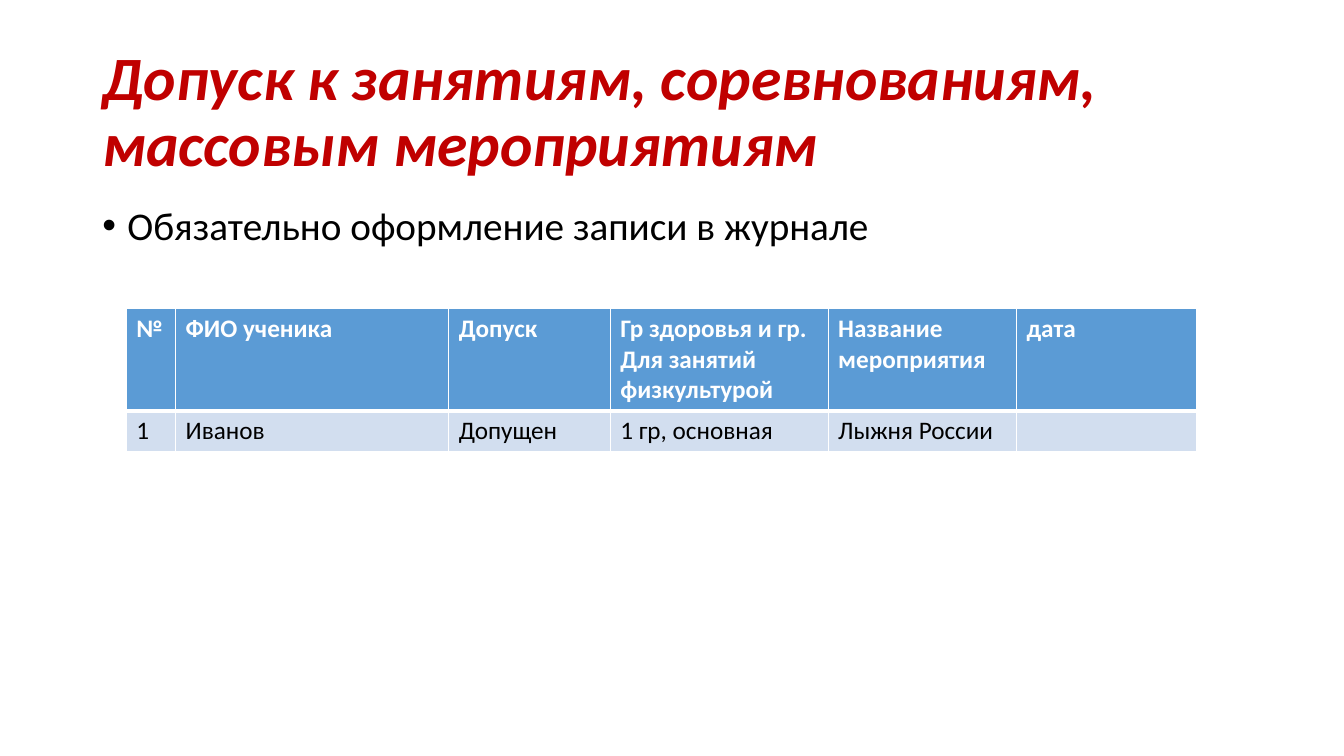
from lxml import etree
from pptx import Presentation
from pptx.dml.color import RGBColor
from pptx.enum.text import MSO_ANCHOR, MSO_AUTO_SIZE, PP_ALIGN
from pptx.oxml.ns import qn
from pptx.util import Pt

MIDDLE, TOP = MSO_ANCHOR.MIDDLE, MSO_ANCHOR.TOP
LEFT = PP_ALIGN.LEFT
NO_AUTOFIT = MSO_AUTO_SIZE.NONE
TITLE_ONLY = 5

FONT = "Calibri"
RED, BLACK, WHITE = "C00000", "000000", "FFFFFF"
HEADER_BLUE, ROW_BLUE = "5B9BD5", "D2DEEF"

TITLE_BOX = (66, 28.8, 828, 104.4)
BODY_BOX = (66, 144, 828, 342.72)
JOURNAL_BOX = (90.25, 220.3, 764.6, 101.5)

COLUMN_WIDTHS = (35.2, 195.1, 115.4, 155.6, 134.6, 128.7)
ENTRY_HEIGHT = 29.2
JOURNAL = (
    ("№", "ФИО ученика", "Допуск", "Гр здоровья и гр. Для занятий физкультурой",
     "Название мероприятия", "дата"),
    ("1", "Иванов", "Допущен", "1 гр, основная", "Лыжня России", ""),
)


def color(value):
    return RGBColor.from_string(value)


def format_font(font, text_color, **values):
    font.color.rgb = color(text_color)
    for name, value in {"name": FONT, **values}.items():
        setattr(font, name, value)


def format_frame(frame, anchor):
    values = {"word_wrap": True, "auto_size": NO_AUTOFIT, "vertical_anchor": anchor}
    for name, value in values.items():
        setattr(frame, name, value)


def add_title(slide, box, text):
    title = slide.shapes.title
    title.left, title.top, title.width, title.height = map(Pt, box)
    format_frame(title.text_frame, MIDDLE)
    paragraph = title.text_frame.paragraphs[0]
    paragraph.alignment = LEFT
    paragraph.line_spacing = 0.9
    run = paragraph.add_run()
    run.text = text
    format_font(run.font, RED, size=Pt(44), bold=True, italic=True)


def add_requirement(slide, box, text):
    frame = slide.shapes.add_textbox(*map(Pt, box)).text_frame
    format_frame(frame, TOP)
    paragraph = frame.paragraphs[0]
    paragraph.line_spacing = 0.9
    paragraph.space_before = Pt(10)
    properties = paragraph._p.get_or_add_pPr()
    properties.set("marL", str(Pt(18)))
    properties.set("indent", str(Pt(-18)))
    etree.SubElement(properties, qn("a:buFont"), typeface="Arial")
    etree.SubElement(properties, qn("a:buChar"), char="•")
    run = paragraph.add_run()
    run.text = text
    format_font(run.font, BLACK, size=Pt(28))


def set_borders(cell, widths):
    """Draw white borders; widths maps the sides L, R, T, B, in that order, to points."""
    properties = cell._tc.get_or_add_tcPr()
    for position, (side, width) in enumerate(widths.items()):
        line = etree.Element(qn(f"a:ln{side}"), w=str(Pt(width)))
        fill = etree.SubElement(line, qn("a:solidFill"))
        etree.SubElement(fill, qn("a:srgbClr"), val=WHITE)
        properties.insert(position, line)


def add_journal(slide, box, entries):
    table = slide.shapes.add_table(len(entries), len(COLUMN_WIDTHS), *map(Pt, box)).table
    for column, width in zip(table.columns, COLUMN_WIDTHS):
        column.width = Pt(width)
    for index, (row, texts) in enumerate(zip(table.rows, entries)):
        header = index == 0
        row.height = Pt(box[3] - ENTRY_HEIGHT * (len(entries) - 1) if header else ENTRY_HEIGHT)
        for cell, text in zip(row.cells, texts):
            cell.text = text
            cell.fill.solid()
            cell.fill.fore_color.rgb = color(HEADER_BLUE if header else ROW_BLUE)
            format_font(cell.text_frame.paragraphs[0].font, WHITE if header else BLACK,
                        size=Pt(18), bold=header)
            for run in cell.text_frame.paragraphs[0].runs:
                format_font(run.font, WHITE if header else BLACK, size=Pt(18), bold=header)
            set_borders(cell, {"L": 1, "R": 1, "T": 3 if index == 1 else 1,
                               "B": 3 if header else 1})


def main():
    presentation = Presentation()
    presentation.slide_width, presentation.slide_height = Pt(960), Pt(540)
    slide = presentation.slides.add_slide(presentation.slide_layouts[TITLE_ONLY])
    add_title(slide, TITLE_BOX, "Допуск к занятиям, соревнованиям, массовым мероприятиям")
    add_requirement(slide, BODY_BOX, "Обязательно оформление записи в журнале")
    add_journal(slide, JOURNAL_BOX, JOURNAL)
    presentation.save("out.pptx")


if __name__ == "__main__":
    main()
